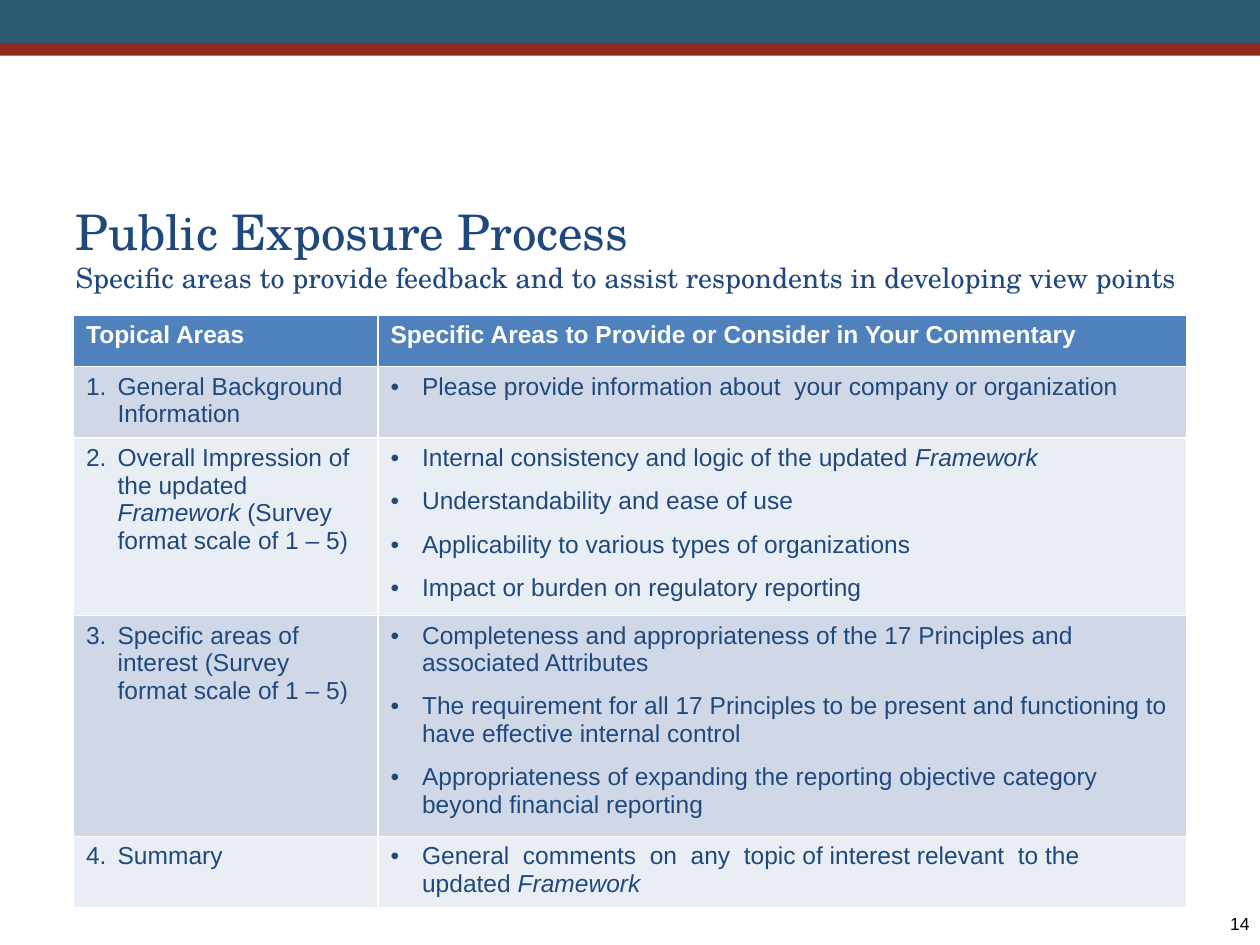
from lxml import etree
from pptx import Presentation
from pptx.dml.color import RGBColor
from pptx.enum.shapes import MSO_SHAPE
from pptx.enum.text import MSO_ANCHOR, MSO_AUTO_SIZE, PP_ALIGN
from pptx.oxml.ns import qn
from pptx.util import Inches, Pt

RECT = MSO_SHAPE.RECTANGLE
BOTTOM = MSO_ANCHOR.BOTTOM
FIXED = MSO_AUTO_SIZE.NONE
LEFT, RIGHT = PP_ALIGN.LEFT, PP_ALIGN.RIGHT

TEAL = RGBColor(0x2A, 0x59, 0x70)
RED = RGBColor(0x91, 0x27, 0x1F)
NAVY = RGBColor(0x1F, 0x49, 0x7D)
BLUE = RGBColor(0x4F, 0x81, 0xBD)
BANDS = RGBColor(0xD0, 0xD8, 0xE8), RGBColor(0xE9, 0xED, 0xF4)
WHITE = RGBColor(0xFF, 0xFF, 0xFF)
BLACK = RGBColor(0x00, 0x00, 0x00)

COLS, ROWS = 120, 90

HEADERS = "Topical Areas", "Specific Areas to Provide or Consider in Your Commentary"
TOPICS = [
    ("General Background Information",
     ["Please provide information about  your company or organization"]),
    ("Overall Impression of the updated *Framework *(Survey format scale of 1 – 5)",
     ["Internal consistency and logic of the updated *Framework*",
      "Understandability and ease of use",
      "Applicability to various types of organizations",
      "Impact or burden on regulatory reporting"]),
    ("Specific areas of interest (Survey format scale of 1 – 5)",
     ["Completeness and appropriateness of the 17 Principles and associated Attributes",
      "The requirement for all 17 Principles to be present and functioning to "
      "have effective internal control",
      "Appropriateness of expanding the reporting objective category "
      "beyond financial reporting"]),
    ("Summary",
     ["General  comments  on  any  topic of interest relevant  to the updated *Framework*"]),
]


class Deck:
    """Style and current slide, with lengths in grid columns and rows."""

    heading_font = "TeX Gyre Schola"
    body_font = "Arial"

    def __init__(self):
        self.prs = Presentation()
        self.prs.slide_width, self.prs.slide_height = Inches(10), Inches(7.5)
        self.s = self.prs.slides.add_slide(self.prs.slide_layouts[5])

    def box(self, col, row, cols, rows):
        dx, dy = self.prs.slide_width / COLS, self.prs.slide_height / ROWS
        return [round(v) for v in (col * dx, row * dy, cols * dx, rows * dy)]

    def run(self, p, text, **values):
        r = p.add_run()
        r.text = text
        color = values.pop("color")
        for name, value in values.items():
            setattr(r.font, name, value)
        r.font.color.rgb = color

    def bar(self, color, *grid):
        sp = self.s.shapes.add_shape(RECT, *self.box(*grid))
        sp.shadow.inherit = False
        sp.fill.solid()
        sp.fill.fore_color.rgb = color
        sp.line.fill.background()

    def title(self, heading, subtitle, *grid):
        sp = self.s.shapes.title
        sp.left, sp.top, sp.width, sp.height = self.box(*grid)
        tf = sp.text_frame
        values = {"word_wrap": True, "auto_size": FIXED,
                  "vertical_anchor": BOTTOM, "margin_bottom": 0}
        for name, value in values.items():
            setattr(tf, name, value)
        p = tf.paragraphs[0]
        p.alignment = LEFT
        style = {"name": self.heading_font, "color": NAVY}
        self.run(p, heading, size=Pt(28), **style)
        p.add_line_break()
        self.run(p, subtitle, size=Pt(16), **style)

    def page_number(self, text, *grid):
        tf = self.s.shapes.add_textbox(*self.box(*grid)).text_frame
        tf.word_wrap = True
        for side in ("left", "top", "right", "bottom"):
            setattr(tf, f"margin_{side}", 0)
        p = tf.paragraphs[0]
        p.alignment = RIGHT
        self.run(p, text, name=self.body_font, size=Pt(10), color=BLACK)

    def mark(self, p, tag, **attributes):
        pPr = p._p.get_or_add_pPr()
        pPr.set("marL", str(Inches(0.25)))
        pPr.set("indent", str(-Inches(0.25)))
        etree.SubElement(pPr, qn("a:buFont"), typeface=self.body_font)
        etree.SubElement(pPr, qn(f"a:{tag}"), **attributes)

    def cell(self, cell, texts, fill, color=NAVY, bold=False, marker=None):
        cell.fill.solid()
        cell.fill.fore_color.rgb = fill
        tf = cell.text_frame
        for i, text in enumerate(texts):
            p = tf.add_paragraph() if i else tf.paragraphs[0]
            if marker:
                self.mark(p, **marker)
            p.space_before, p.space_after = Pt(3 if i else 0), Pt(6)
            for j, part in enumerate(text.split("*")):
                if part:
                    self.run(p, part, name=self.body_font, size=Pt(14),
                             bold=bold, italic=j % 2 == 1, color=color)

    def table(self, headers, topics, widths, row_height, *grid):
        frame = self.s.shapes.add_table(len(topics) + 1, len(headers), *self.box(*grid))
        table = frame.table
        for column, width in zip(table.columns, widths):
            column.width = self.box(0, 0, width, 0)[2]
        for row in table.rows:
            row.height = self.box(0, 0, 0, row_height)[3]
        for i, text in enumerate(headers):
            self.cell(table.cell(0, i), [text], BLUE, WHITE, True)
        for n, (topic, points) in enumerate(topics, 1):
            fill = BANDS[(n - 1) % 2]
            number = {"tag": "buAutoNum", "type": "arabicPeriod", "startAt": str(n)}
            self.cell(table.cell(n, 0), [topic], fill, marker=number)
            self.cell(table.cell(n, 1), points, fill, marker={"tag": "buChar", "char": "•"})


def main():
    deck = Deck()
    deck.bar(TEAL, 0, 0, COLS, 4.1)
    deck.bar(RED, 0, 4.1, COLS, 1.2)
    deck.page_number("14", 99, 87, 20, 2)
    deck.table(HEADERS, TOPICS, (29, 77), 4.9, 7, 30, 106, 56.4)
    deck.title("Public Exposure Process",
               "Specific areas to provide feedback and to assist respondents "
               "in developing view points", 6, 14, 108, 14)
    deck.prs.save("out.pptx")


if __name__ == "__main__":
    main()
